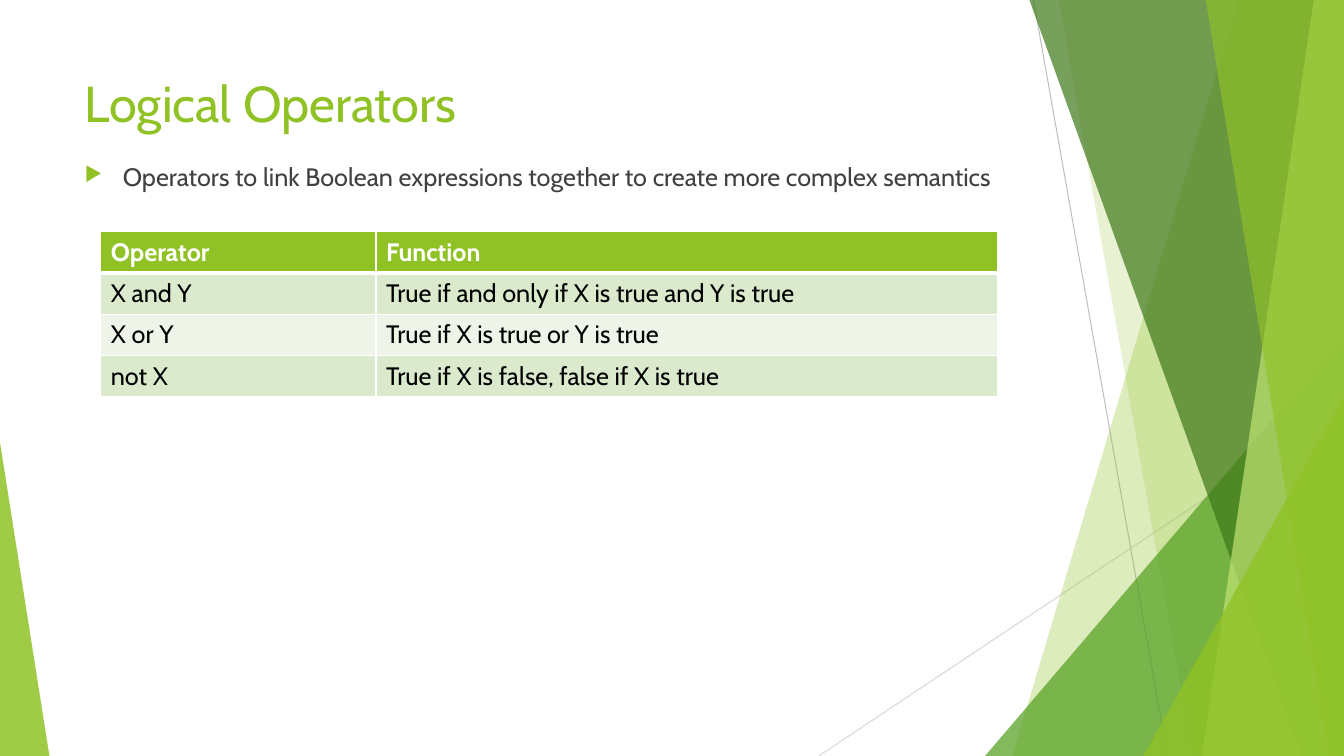
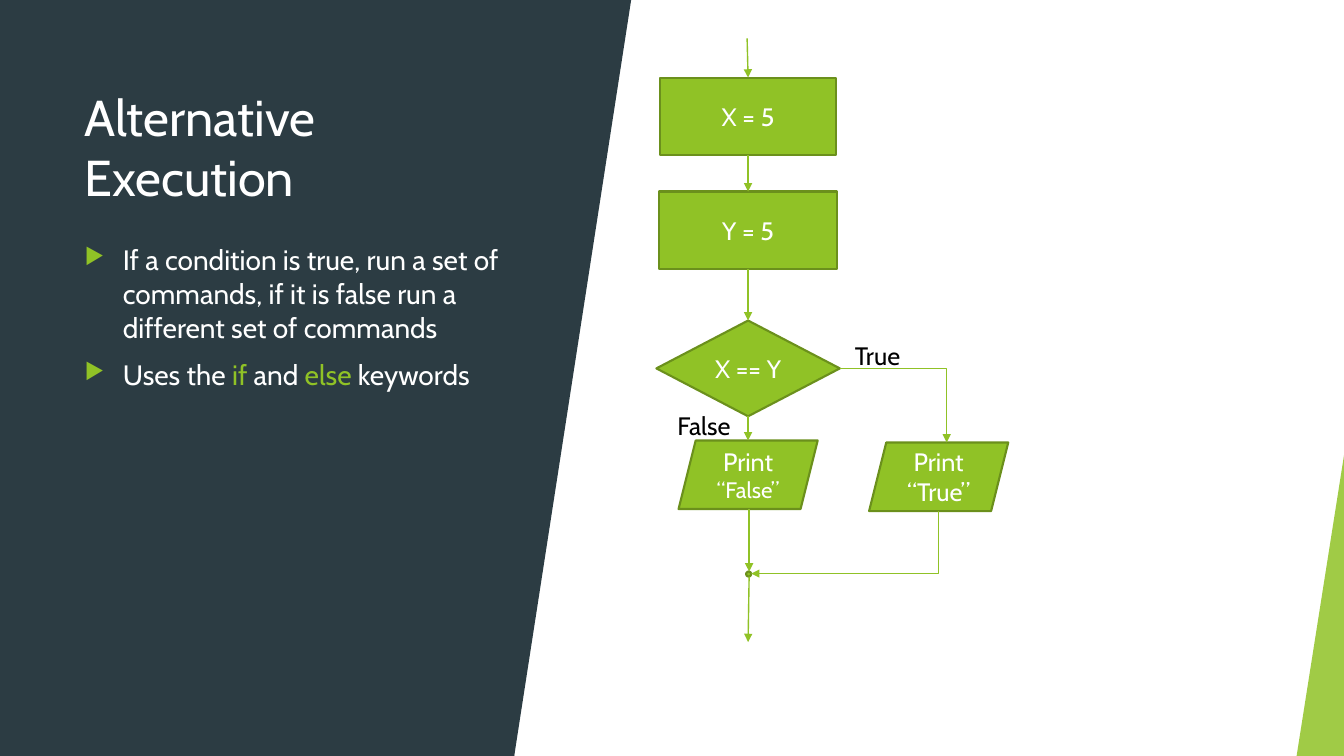
from lxml.etree import SubElement
from pptx import Presentation
from pptx.dml.color import RGBColor
from pptx.enum.shapes import MSO_CONNECTOR as CONN, MSO_SHAPE as SHAPE
from pptx.enum.text import MSO_ANCHOR as ANCHOR, PP_ALIGN as ALIGN
from pptx.oxml.ns import qn
from pptx.util import Inches, Pt

FONT = "Cabin"
GREEN, DARK_GREEN, MID_GREEN = "90C226", "6B901C", "54A021"
WHITE, BLACK, GREY, SLATE = "FFFFFF", "000000", "404040", "2C3C43"
WIDTH, HEIGHT = 13.33, 7.5
LEFT = 0.74
FLOW_X = 7.42
TOP, BOTTOM, RIGHT = 0, 2, 3


def rgb(color):
    return RGBColor.from_string(color)


def add_run(p, text, size, color, bold=False):
    r = p.add_run()
    r.text = text
    r.font.name = FONT
    r.font.size = Pt(size)
    r.font.bold = bold
    r.font.color.rgb = rgb(color)


def paint(sp, color, opacity=100, outline=None):
    sp.shadow.inherit = False
    sp.fill.solid()
    sp.fill.fore_color.rgb = rgb(color)
    if opacity < 100:
        clr = sp._element.spPr.find(qn("a:solidFill")).find(qn("a:srgbClr"))
        SubElement(clr, qn("a:alpha"), val=str(opacity * 1000))
    if outline:
        sp.line.color.rgb = rgb(outline)
        sp.line.width = Pt(1.5)
    else:
        sp.line.fill.background()


def add_block(s, kind, x, y, w, h, color, opacity=100, outline=None):
    sp = s.shapes.add_shape(kind, Inches(x), Inches(y), Inches(w), Inches(h))
    paint(sp, color, opacity, outline)
    return sp


def add_triangle(s, x, y, w, h, color, opacity=100, apex=1):
    sp = add_block(s, SHAPE.ISOSCELES_TRIANGLE, x, y, w, h, color, opacity)
    sp.adjustments[0] = apex
    return sp


def add_shard(s, top_x, bottom_x, color, opacity):
    builder = s.shapes.build_freeform(Inches(top_x), 0)
    corners = [(WIDTH, 0), (WIDTH, HEIGHT), (bottom_x, HEIGHT)]
    builder.add_line_segments([(Inches(x), Inches(y)) for x, y in corners])
    paint(builder.convert_to_shape(), color, opacity)


def add_line(s, x1, y1, x2, y2, color, width=0.75, kind=CONN.STRAIGHT):
    cn = s.shapes.add_connector(kind, Inches(x1), Inches(y1), Inches(x2), Inches(y2))
    cn.line.color.rgb = rgb(color)
    cn.line.width = Pt(width)
    SubElement(cn._element.spPr, qn("a:effectLst"))
    return cn


def add_arrow(s, x1, y1, x2, y2, begin=None, end=None, kind=CONN.STRAIGHT):
    cn = add_line(s, x1, y1, x2, y2, GREEN, 1, kind)
    SubElement(cn.get_or_add_ln(), qn("a:tailEnd"), type="triangle")
    if begin:
        cn.begin_connect(*begin)
    if end:
        cn.end_connect(*end)
    return cn


def add_elbow(s, x1, y1, x2, y2, begin=None, down_first=False):
    if down_first:
        cx, cy = (x1 + x2) / 2, (y1 + y2) / 2
        half_w, half_h = abs(y2 - y1) / 2, abs(x2 - x1) / 2
        x1, y1, x2, y2 = cx - half_w, cy - half_h, cx + half_w, cy + half_h
    cn = add_arrow(s, x1, y1, x2, y2, begin, kind=CONN.ELBOW)
    spPr = cn._element.spPr
    spPr.find(qn("a:prstGeom")).set("prst", "bentConnector2")
    if down_first:
        spPr.find(qn("a:xfrm")).set("rot", "5400000")


def add_textbox(s, x, y, w, h, wrap=True):
    tf = s.shapes.add_textbox(Inches(x), Inches(y), Inches(w), Inches(h)).text_frame
    tf.word_wrap = wrap
    return tf


def add_title(s, text, y, w, h, color, anchor=ANCHOR.TOP):
    tf = add_textbox(s, LEFT, y, w, h)
    tf.vertical_anchor = anchor
    add_run(tf.paragraphs[0], text, 36, color)


def add_bullets(s, y, w, h, size, items):
    tf = add_textbox(s, LEFT, y, w, h)
    for i, runs in enumerate(items):
        p = tf.add_paragraph() if i else tf.paragraphs[0]
        p.space_before = Pt(10)
        pPr = p._p.get_or_add_pPr()
        pPr.set("marL", str(Inches(0.38)))
        pPr.set("indent", str(Inches(-0.38)))
        SubElement(SubElement(pPr, qn("a:buClr")), qn("a:srgbClr"), val=GREEN)
        SubElement(pPr, qn("a:buSzPct"), val="80000")
        SubElement(pPr, qn("a:buChar"), char="▶")
        for text, color in runs:
            add_run(p, text, size, color)


def add_label(s, text, x, y, w):
    tf = add_textbox(s, x, y, w, 0.4, wrap=False)
    add_run(tf.paragraphs[0], text, 18, BLACK)


def add_step(s, kind, center_x, y, w, h, runs):
    sp = add_block(s, kind, center_x - w / 2, y, w, h, GREEN, outline=DARK_GREEN)
    tf = sp.text_frame
    tf.word_wrap = True
    tf.vertical_anchor = ANCHOR.MIDDLE
    p = tf.paragraphs[0]
    p.alignment = ALIGN.CENTER
    for text, size in runs:
        add_run(p, text, size, WHITE)
    return sp


def add_cell_borders(cell, bottom):
    tcPr = cell._tc.get_or_add_tcPr()
    for i, (side, width) in enumerate([("L", 1), ("R", 1), ("T", 1), ("B", bottom)]):
        ln = tcPr.makeelement(qn(f"a:ln{side}"), {"w": str(Pt(width))})
        SubElement(SubElement(ln, qn("a:solidFill")), qn("a:srgbClr"), val=WHITE)
        tcPr.insert(i, ln)


def add_grid(s, x, y, col_widths, row_height, rows):
    frame = s.shapes.add_table(len(rows), len(col_widths), Inches(x), Inches(y),
                               Inches(sum(col_widths)), Inches(row_height * len(rows)))
    table = frame.table
    for col, width in zip(table.columns, col_widths):
        col.width = Inches(width)
    for i, texts in enumerate(rows):
        header = i == 0
        table.rows[i].height = Inches(row_height)
        fill = GREEN if header else ("EEF4E8", "DBE9CD")[i % 2]
        for j, text in enumerate(texts):
            cell = table.cell(i, j)
            cell.fill.solid()
            cell.fill.fore_color.rgb = rgb(fill)
            add_cell_borders(cell, 3 if header else 1)
            add_run(cell.text_frame.paragraphs[0], text, 18,
                    WHITE if header else BLACK, header)


def add_facets(s):
    add_line(s, 10.25, 0, 11.58, HEIGHT, "BFBFBF")
    add_line(s, WIDTH, 4.03, 8.12, HEIGHT, "D9D9D9")
    add_shard(s, 12.28, 10.04, GREEN, 30)
    add_shard(s, 10.5, 11.83, GREEN, 20)
    add_triangle(s, 9.77, 3.33, 3.56, 4.17, MID_GREEN, 72)
    add_shard(s, 10.21, 12.91, "3F7819", 70)
    add_shard(s, 13.03, 11.92, "C0E474", 70)
    add_shard(s, 11.96, 13.18, GREEN, 65)
    add_triangle(s, 11.34, 3.93, 1.99, 3.57, GREEN, 80)


def add_corner(s, x, apex):
    add_triangle(s, x, 4.39, 0.49, 3.11, GREEN, 85, apex)


def add_flowchart(s):
    set_x = add_step(s, SHAPE.RECTANGLE, FLOW_X, 0.77, 1.74, 0.77, [("X = 5", 18)])
    set_y = add_step(s, SHAPE.RECTANGLE, FLOW_X, 1.9, 1.76, 0.77, [("Y = 5", 18)])
    test = add_step(s, SHAPE.DIAMOND, FLOW_X, 3.18, 1.82, 0.95, [("X == Y", 18)])
    add_step(s, SHAPE.PARALLELOGRAM, 9.31, 4.39, 1.38, 0.68, [("Print “True”", 18)])
    add_step(s, SHAPE.PARALLELOGRAM, FLOW_X, 4.37, 1.38, 0.68,
             [("Print ", 18), ("“False”", 16)])
    add_block(s, SHAPE.OVAL, 7.4, 5.67, 0.05, 0.05, GREEN, outline=DARK_GREEN)

    add_arrow(s, 7.41, 0.38, FLOW_X, 0.77, end=(set_x, TOP))
    add_arrow(s, FLOW_X, 1.54, FLOW_X, 1.9, (set_x, BOTTOM), (set_y, TOP))
    add_arrow(s, FLOW_X, 2.67, FLOW_X, 3.18, (set_y, BOTTOM), (test, TOP))
    add_arrow(s, FLOW_X, 4.13, FLOW_X, 4.37, (test, BOTTOM))
    add_arrow(s, 7.43, 5.05, 7.43, 5.67)
    add_arrow(s, 7.43, 5.72, FLOW_X, 6.37)
    add_elbow(s, 8.33, 3.66, 9.39, 4.39, (test, RIGHT))
    add_elbow(s, 9.31, 5.07, 7.45, 5.69, down_first=True)
    add_label(s, "True", 8.38, 3.33, 0.7)
    add_label(s, "False", 6.62, 4.02, 0.78)


def add_operators_slide(s):
    add_facets(s)
    add_corner(s, 0, 0)
    add_title(s, "Logical Operators", 0.67, 9.4, 1.44, GREEN)
    add_bullets(s, 1.55, 9.4, 5.05, 18, [
        [("Operators to link Boolean expressions together to create "
          "more complex semantics", GREY)],
    ])
    add_grid(s, 1, 2.3, [2.73, 6.16], 0.41, [
        ("Operator", "Function"),
        ("X and Y", "True if and only if X is true and Y is true"),
        ("X or Y", "True if X is true or Y is true"),
        ("not X", "True if X is false, false if X is true"),
    ])


def add_execution_slide(s):
    add_block(s, SHAPE.RECTANGLE, 0, 0, 5.1, HEIGHT, SLATE)
    add_triangle(s, 5.1, 0, 1.16, HEIGHT, SLATE).rotation = 180
    add_title(s, "Alternative Execution", 0.7, 4.6, 1.5, WHITE, ANCHOR.MIDDLE)
    add_bullets(s, 2.36, 4.35, 3.76, 20, [
        [("If a condition is true, run a set of commands, if it is false "
          "run a different set of commands", WHITE)],
        [("Uses the ", WHITE), ("if", GREEN), (" and ", WHITE),
         ("else", GREEN), (" keywords", WHITE)],
    ])
    add_corner(s, 12.86, 1)
    add_flowchart(s)


def main():
    prs = Presentation()
    prs.slide_width, prs.slide_height = Inches(WIDTH), Inches(HEIGHT)
    for build in (add_operators_slide, add_execution_slide):
        build(prs.slides.add_slide(prs.slide_layouts[6]))
    prs.save("out.pptx")


if __name__ == "__main__":
    main()
